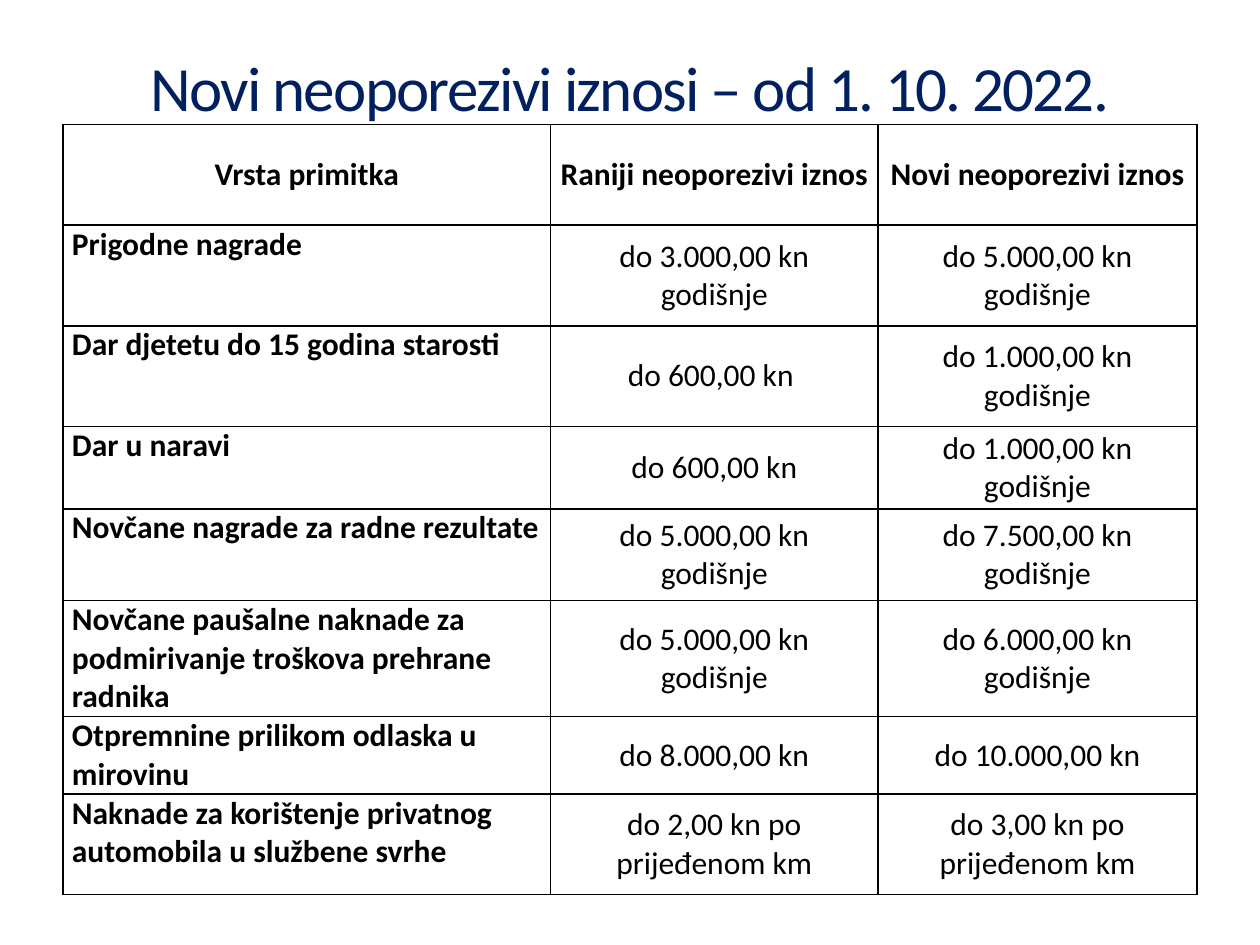
from dataclasses import dataclass

from lxml.etree import SubElement
from pptx import Presentation
from pptx.dml.color import RGBColor
from pptx.enum.text import MSO_ANCHOR as Anchor, PP_ALIGN as Align
from pptx.oxml.ns import qn
from pptx.util import Cm, Pt


@dataclass(frozen=True)
class Theme:
    font: str = "Calibri"
    title_color: str = "002060"
    text_color: str = "000000"
    border_color: str = "000000"
    title_size: int = 36
    text_size: int = 18
    border_width: int = 1


theme = Theme()


def style_paragraph(para, size, color, bold, align):
    para.alignment = align
    para.font.name = theme.font
    para.font.size = Pt(size)
    para.font.bold = bold
    para.font.color.rgb = RGBColor.from_string(color)


def add_borders(cell):
    properties = cell._tc.get_or_add_tcPr()
    for side in ("a:lnL", "a:lnR", "a:lnT", "a:lnB"):
        line = SubElement(properties, qn(side), w=str(Pt(theme.border_width)))
        fill = SubElement(line, qn("a:solidFill"))
        SubElement(fill, qn("a:srgbClr"), val=theme.border_color)


deck = Presentation()
deck.slide_width, deck.slide_height = Cm(25.4), Cm(19.05)
page = deck.slides.add_slide(deck.slide_layouts[6])

left, width = Cm(1.27), Cm(22.86)

title_box = page.shapes.add_textbox(left, Cm(0.99), width, Cm(1.52))
title_frame = title_box.text_frame
title_frame.word_wrap = True
title_frame.vertical_anchor = Anchor.MIDDLE
title = title_frame.paragraphs[0]
span = title.add_run()
span.text = "Novi neoporezivi iznosi – od 1. 10. 2022."
span.font._element.set("spc", "-100")
style_paragraph(title, theme.title_size, theme.title_color, False, Align.CENTER)

rows = [
    ("Vrsta primitka", "Raniji neoporezivi iznos", "Novi neoporezivi iznos"),
    ("Prigodne nagrade", "do 3.000,00 kn\ngodišnje", "do 5.000,00 kn godišnje"),
    ("Dar djetetu do 15 godina starosti", "do 600,00 kn ", "do 1.000,00 kn godišnje"),
    ("Dar u naravi", "do 600,00 kn", "do 1.000,00 kn godišnje"),
    ("Novčane nagrade za radne rezultate", "do 5.000,00 kn\ngodišnje", "do 7.500,00 kn godišnje"),
    ("Novčane paušalne naknade za podmirivanje troškova prehrane radnika",
     "do 5.000,00 kn\ngodišnje", "do 6.000,00 kn godišnje"),
    ("Otpremnine prilikom odlaska u mirovinu", "do 8.000,00 kn", "do 10.000,00 kn"),
    ("Naknade za korištenje privatnog automobila u službene svrhe",
     "do 2,00 kn po prijeđenom km", "do 3,00 kn po prijeđenom km"),
]
column_widths = [9.83, 6.6, 6.43]
row_heights = [2.03, 2.03, 2.03, 1.66, 1.85, 2.34, 1.56, 2.03]

table = page.shapes.add_table(
    len(rows), len(column_widths), left, Cm(2.51), width, Cm(sum(row_heights))
).table
table.horz_banding = False
for column, column_width in zip(table.columns, column_widths):
    column.width = Cm(column_width)

for row_index, (texts, height) in enumerate(zip(rows, row_heights)):
    table.rows[row_index].height = Cm(height)
    for column_index, text in enumerate(texts):
        is_header = row_index == 0
        is_label = column_index == 0 and not is_header
        cell = table.cell(row_index, column_index)
        add_borders(cell)
        cell.fill.background()
        cell.margin_left = cell.margin_right = Cm(0.18)
        cell.margin_top = cell.margin_bottom = 0
        cell.vertical_anchor = Anchor.TOP if is_label else Anchor.MIDDLE
        cell.text = text
        for para in cell.text_frame.paragraphs:
            style_paragraph(para, theme.text_size, theme.text_color,
                            is_header or is_label,
                            Align.LEFT if is_label else Align.CENTER)

deck.save("out.pptx")
